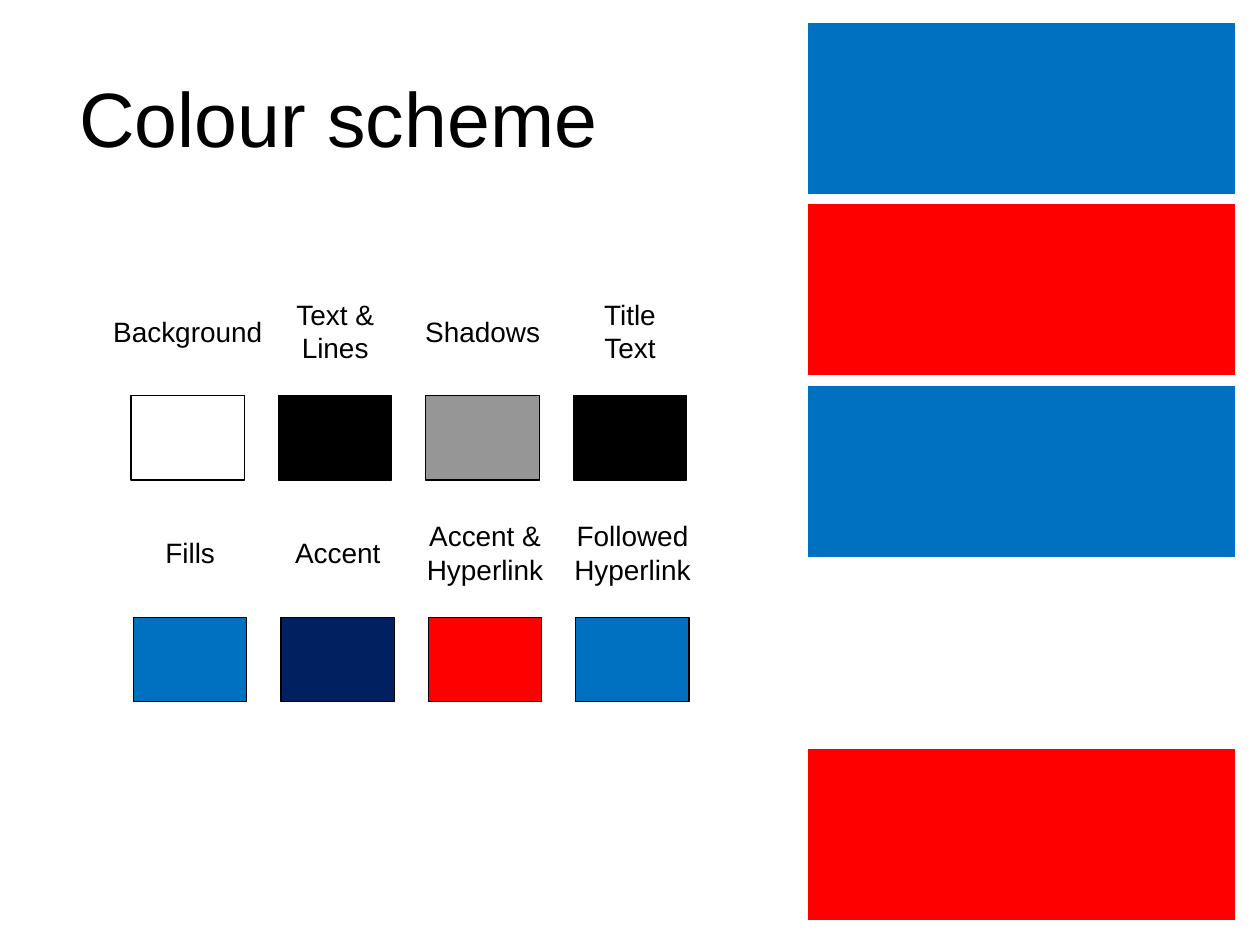
from pptx import Presentation
from pptx.dml.color import RGBColor
from pptx.enum.shapes import MSO_SHAPE
from pptx.enum.text import MSO_ANCHOR, MSO_AUTO_SIZE, PP_ALIGN
from pptx.util import Inches, Pt

COLOURS = {
    "white": "FFFFFF",
    "black": "000000",
    "grey": "969696",
    "blue": "0070C0",
    "navy": "002060",
    "red": "FF0000",
}
FONT = "Arial"

BARS = ["blue", "red", "blue", "white", "red"]
BAR_LEFT, BAR_TOP, BAR_WIDTH, BAR_HEIGHT = 6.37, 0.14, 3.47, 1.44

SWATCH_WIDTH, SWATCH_HEIGHT, SWATCH_PITCH = 0.9, 0.67, 1.17
LABEL_RISE = 0.51  # from the middle of a label down to its swatch

# Each row: left, top, then (label, label width, colour); \v is a line break
SWATCH_ROWS = [
    (1.04, 3.14, [
        ("Background", 1.39, "white"),
        ("Text &\nLines", 0.84, "black"),
        ("Shadows", 1.11, "grey"),
        ("Title\vText", 0.63, "black"),
    ]),
    (1.06, 4.9, [
        ("Fills", 0.6, "blue"),
        ("Accent", 0.88, "navy"),
        ("Accent &\nHyperlink", 1.13, "red"),
        ("Followed\nHyperlink", 1.13, "blue"),
    ]),
]


def colour(name):
    return RGBColor.from_string(COLOURS[name])


def format_text(text_frame, size, alignment):
    for paragraph in text_frame.paragraphs:
        paragraph.alignment = alignment
        for run in paragraph.runs:
            run.font.name = FONT
            run.font.size = Pt(size)
            run.font.color.rgb = colour("black")


def add_title(slide, text):
    title = slide.shapes.title
    title.left, title.top = Inches(0.53), Inches(0.3)
    title.width, title.height = Inches(8.97), Inches(1.25)
    title.text_frame.text = text
    title.text_frame.vertical_anchor = MSO_ANCHOR.MIDDLE
    format_text(title.text_frame, 44, PP_ALIGN.LEFT)


def add_rectangle(slide, left, top, width, height, fill, line, line_width):
    shape = slide.shapes.add_shape(
        MSO_SHAPE.RECTANGLE, Inches(left), Inches(top), Inches(width), Inches(height))
    shape.shadow.inherit = False
    shape.fill.solid()
    shape.fill.fore_color.rgb = colour(fill)
    shape.line.color.rgb = colour(line)
    shape.line.width = Pt(line_width)


def add_label(slide, text, centre, middle, width):
    height = 0.37 if len(text.splitlines()) == 1 else 0.64
    label = slide.shapes.add_textbox(
        Inches(centre - width / 2), Inches(middle - height / 2),
        Inches(width), Inches(height))
    text_frame = label.text_frame
    text_frame.word_wrap = False
    text_frame.auto_size = MSO_AUTO_SIZE.SHAPE_TO_FIT_TEXT
    text_frame.text = text
    format_text(text_frame, 16, PP_ALIGN.CENTER)


def add_swatch_row(slide, row_left, top, swatches):
    for column, (text, label_width, fill) in enumerate(swatches):
        left = row_left + column * SWATCH_PITCH
        add_rectangle(slide, left, top, SWATCH_WIDTH, SWATCH_HEIGHT, fill, "black", 0.75)
        add_label(slide, text, left + SWATCH_WIDTH / 2, top - LABEL_RISE, label_width)


def main():
    presentation = Presentation()
    presentation.slide_width, presentation.slide_height = Inches(10), Inches(7.5)
    slide = presentation.slides.add_slide(
        presentation.slide_layouts.get_by_name("Title Only"))
    for index, fill in enumerate(BARS):
        add_rectangle(slide, BAR_LEFT, BAR_TOP + index * BAR_HEIGHT,
                      BAR_WIDTH, BAR_HEIGHT, fill, "white", 6)
    add_title(slide, "Colour scheme")
    for row_left, top, swatches in SWATCH_ROWS:
        add_swatch_row(slide, row_left, top, swatches)
    presentation.save("out.pptx")


if __name__ == "__main__":
    main()
